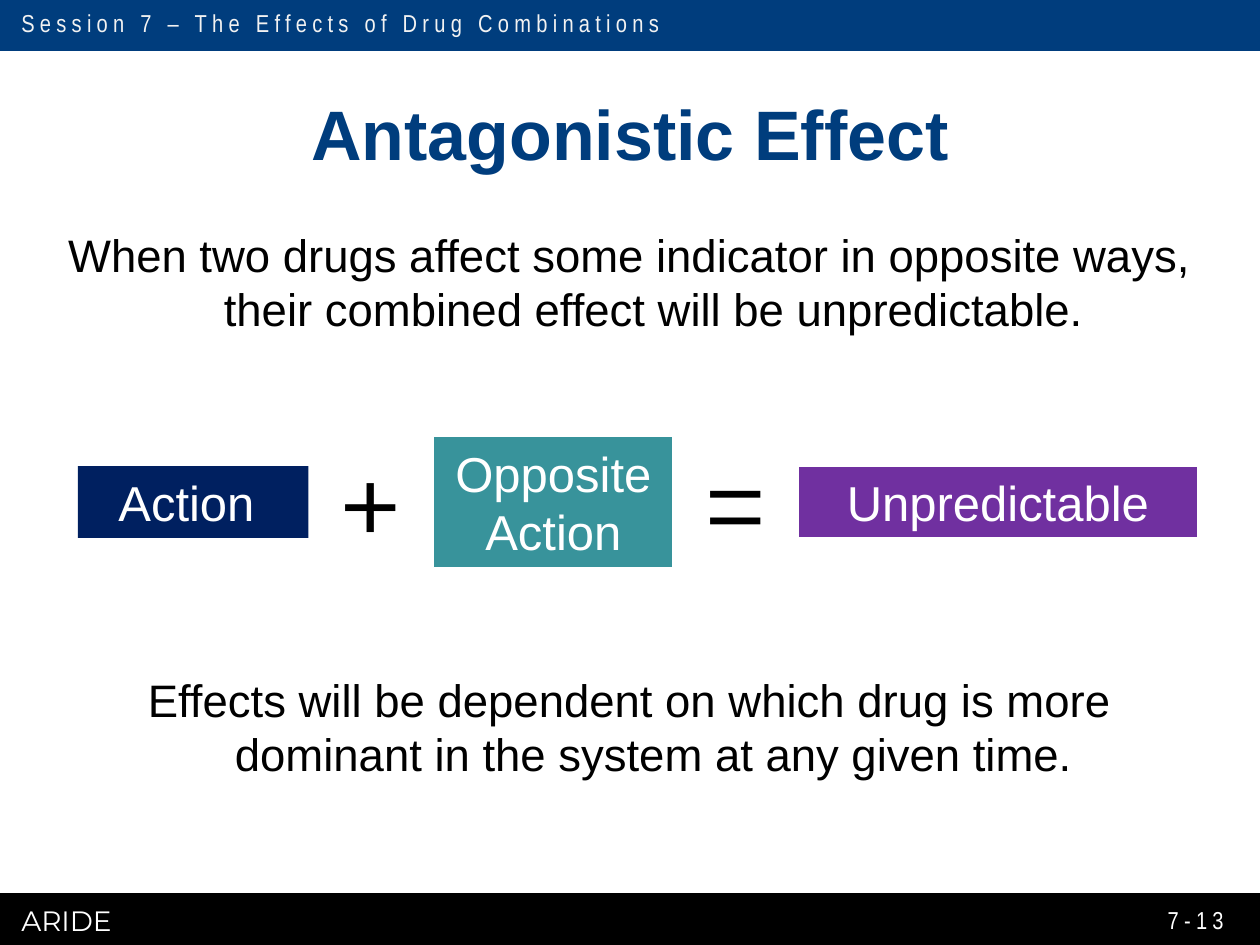
import pptx
import pptx.util
import pptx.dml.color
import pptx.enum.shapes
import pptx.enum.text

Cm, Pt = pptx.util.Cm, pptx.util.Pt
Align = pptx.enum.text.PP_ALIGN
Anchor = pptx.enum.text.MSO_ANCHOR
Rect = pptx.enum.shapes.MSO_SHAPE.RECTANGLE

WIDE, HIGH, BAR = 25.4, 19.05, 1.02
NAVY, BLACK, WHITE = "003D7D", "000000", "FFFFFF"
TITLE = "Antagonistic Effect"
BARS = [(-0.03, NAVY), (HIGH - BAR, BLACK)]
LABELS = [
    ("Session 7 – The Effects of Drug Combinations", (0.18, 0.03, 18.72, 0.86),
     14, "Arial Narrow", "F2F2F2", Align.LEFT, 300),
    ("ARIDE", (0.18, 18.08, 14.53, 0.94), 16, "Montserrat", WHITE, Align.LEFT, 0),
    ("7-13", (19, 18.03, 5.92, 1.02), 14, "Arial Narrow", WHITE, Align.RIGHT, 300),
]
NOTES = [
    (4.57, "When two drugs affect some indicator in opposite ways, "
           "their combined effect will be unpredictable."),
    (13.54, "Effects will be dependent on which drug is more "
            "dominant in the system at any given time."),
]
TERMS = [
    ("Action ", 4.65, 1.45, "002060", None),
    ("+", 2.46, 3.07, None, None),
    ("Opposite Action", 4.83, 2.64, "38939B", WHITE),
    ("=", 2.46, 3.07, None, None),
    ("Unpredictable", 8.05, 1.45, "7030A0", WHITE),
]
LEFT, MID, GAP = 1.57, 10.12, 0.03


def tint(color, code):
    color.rgb = pptx.dml.color.RGBColor.from_string(code)


def place(shape, box):
    shape.left, shape.top, shape.width, shape.height = map(Cm, box)


def write(shape, text, size, font, code, align=Align.CENTER,
          bold=False, inset=True, anchor=Anchor.MIDDLE):
    frame = shape.text_frame
    frame.word_wrap = True
    frame.vertical_anchor = anchor
    if not inset:
        frame.margin_left = frame.margin_right = 0
        frame.margin_top = frame.margin_bottom = 0
    para = frame.paragraphs[0]
    para.text = text
    para.alignment = align
    para.font.size = Pt(size)
    para.font.name = font
    para.font.bold = bold
    tint(para.font.color, code)
    return para


def block(slide, box, fill, edge=None, width=0.75):
    shape = slide.shapes.add_shape(Rect, *map(Cm, box))
    shape.shadow.inherit = False
    shape.fill.solid()
    tint(shape.fill.fore_color, fill)
    if edge:
        tint(shape.line.color, edge)
        shape.line.width = Pt(width)
    else:
        shape.line.fill.background()
    return shape


def label(slide, box):
    return slide.shapes.add_textbox(*map(Cm, box))


def main():
    deck = pptx.Presentation()
    deck.slide_width, deck.slide_height = Cm(WIDE), Cm(HIGH)
    slide = deck.slides.add_slide(deck.slide_layouts[5])

    for top, code in BARS:
        block(slide, (0, top, WIDE, BAR), code, code, 2)
    for text, box, size, font, code, align, space in LABELS:
        para = write(label(slide, box), text, size, font, code, align)
        if space:
            para.runs[0].font._element.set("spc", str(space))

    title = slide.shapes.title
    place(title, (1.27, 1.78, 22.86, 1.78))
    write(title, TITLE, 40, "Arial", NAVY, bold=True, inset=False)

    for top, text in NOTES:
        shape = label(slide, (1.27, top, 22.86, 2.3))
        para = write(shape, text, 26, "Arial", BLACK, inset=False, anchor=Anchor.TOP)
        props = para._p.get_or_add_pPr()
        props.set("marL", str(Cm(0.97)))
        props.set("indent", str(-Cm(0.97)))

    left = LEFT
    for text, width, high, fill, edge in TERMS:
        box = (left, MID - high / 2, width, high)
        if fill:
            write(block(slide, box, fill, edge), text, 28, "Arial", WHITE)
        else:
            write(label(slide, box), text, 66, "Montserrat", BLACK)
        left += width + GAP

    deck.save("out.pptx")


if __name__ == "__main__":
    main()
